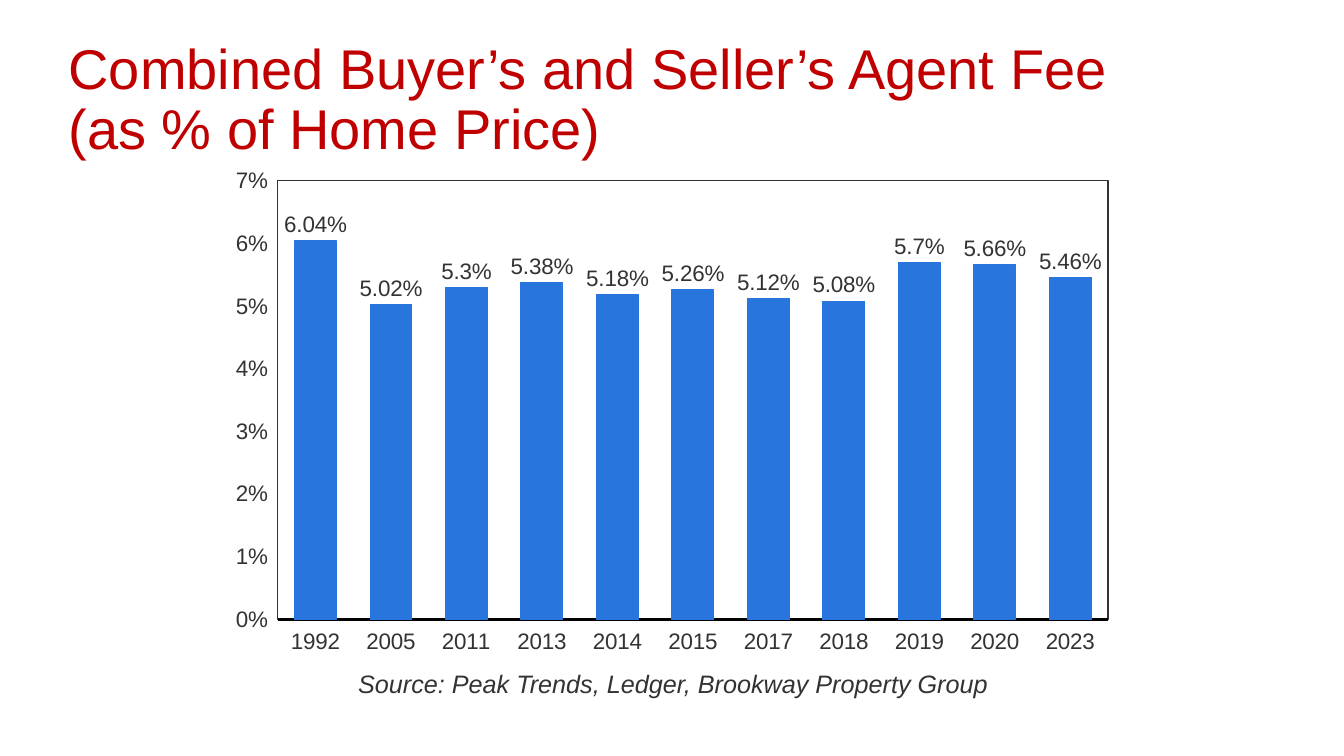
import pptx
import pptx.chart.data
import pptx.dml.color
import pptx.enum.chart
import pptx.enum.text
import pptx.oxml
import pptx.oxml.ns
import pptx.util

Inches = pptx.util.Inches
Pt = pptx.util.Pt
enum = pptx.enum.chart

hues = {"title": "C00000", "text": "333333", "bar": "2875DD", "base": "000000"}
fees = {
    "1992": 0.0604, "2005": 0.0502, "2011": 0.053, "2013": 0.0538,
    "2014": 0.0518, "2015": 0.0526, "2017": 0.0512, "2018": 0.0508,
    "2019": 0.057, "2020": 0.0566, "2023": 0.0546,
}


def rgb(name):
    return pptx.dml.color.RGBColor.from_string(hues[name])


def style(font, size, hue, italic=False):
    look = {"name": "Arial", "size": Pt(size), "bold": False, "italic": italic}
    for key, value in look.items():
        setattr(font, key, value)
    font.color.rgb = rgb(hue)


deck = pptx.Presentation()
deck.slide_width = Inches(13.33)
deck.slide_height = Inches(7.5)
slide = deck.slides.add_slide(deck.slide_layouts[6])

box = slide.shapes.add_textbox(Inches(0.68), Inches(0.7), Inches(12.11), Inches(0.61))
frame = box.text_frame
form = {
    "word_wrap": True,
    "vertical_anchor": pptx.enum.text.MSO_ANCHOR.MIDDLE,
    "margin_left": 0, "margin_right": 0, "margin_top": 0, "margin_bottom": 0,
}
for key, value in form.items():
    setattr(frame, key, value)
frame.text = "Combined Buyer’s and Seller’s Agent Fee\n(as % of Home Price)"
for para in frame.paragraphs:
    para.line_spacing = 0.9
    style(para.runs[0].font, 40, "title")

data = pptx.chart.data.CategoryChartData(number_format="0.0#%")
data.categories = list(fees)
data.add_series("Agent fee", list(fees.values()))
chart = slide.shapes.add_chart(
    enum.XL_CHART_TYPE.COLUMN_CLUSTERED,
    Inches(2.17), Inches(1.58), Inches(9), Inches(5), data,
).chart
chart.has_legend = False
chart.has_title = False
style(chart.font, 16, "text")

plot = chart.plots[0]
form = {"gap_width": 80, "overlap": -30, "vary_by_categories": False, "has_data_labels": True}
for key, value in form.items():
    setattr(plot, key, value)
form = {
    "show_value": True,
    "number_format": "0.0#%",
    "number_format_is_linked": False,
    "position": enum.XL_LABEL_POSITION.OUTSIDE_END,
}
for key, value in form.items():
    setattr(plot.data_labels, key, value)
style(plot.data_labels.font, 16, "text")

bars = plot.series[0].format
bars.fill.solid()
bars.fill.fore_color.rgb = rgb("bar")
bars.line.color.rgb = rgb("bar")
bars.line.width = Pt(0.75)

for axis in (chart.category_axis, chart.value_axis):
    form = {
        "has_major_gridlines": False,
        "major_tick_mark": enum.XL_TICK_MARK.NONE,
        "minor_tick_mark": enum.XL_TICK_MARK.NONE,
        "tick_label_position": enum.XL_TICK_LABEL_POSITION.LOW,
    }
    for key, value in form.items():
        setattr(axis, key, value)
    style(axis.tick_labels.font, 16, "text")
base = chart.category_axis.format.line
base.color.rgb = rgb("base")
base.width = Pt(2)
scale = chart.value_axis
scale.minimum_scale = 0
scale.maximum_scale = 0.07
scale.major_unit = 0.01
scale.format.line.fill.background()
scale.tick_labels.number_format = "#,##0%"
scale.tick_labels.number_format_is_linked = False

area = chart._chartSpace.chart.plotArea
for old in area.findall(pptx.oxml.ns.qn("c:layout")):
    area.remove(old)
spots = {"x": 0.065, "y": 0.043, "w": 0.915, "h": 0.87}
modes = '<c:layoutTarget val="inner"/><c:xMode val="edge"/><c:yMode val="edge"/>'
marks = "".join(f'<c:{key} val="{value}"/>' for key, value in spots.items())
names = pptx.oxml.ns.nsdecls("c", "a")
area.insert(0, pptx.oxml.parse_xml(
    f"<c:layout {names}><c:manualLayout>{modes}{marks}</c:manualLayout></c:layout>"
))
area.append(pptx.oxml.parse_xml(
    f'<c:spPr {names}><a:noFill/><a:ln w="{Pt(0.75)}"><a:solidFill>'
    f'<a:srgbClr val="{hues["text"]}"/></a:solidFill></a:ln></c:spPr>'
))

note = slide.shapes.add_textbox(Inches(3.42), Inches(6.58), Inches(6.58), Inches(0.4))
note.text_frame.word_wrap = True
para = note.text_frame.paragraphs[0]
para.text = "Source: Peak Trends, Ledger, Brookway Property Group "
para.alignment = pptx.enum.text.PP_ALIGN.CENTER
style(para.runs[0].font, 18, "text", True)

deck.save("out.pptx")
